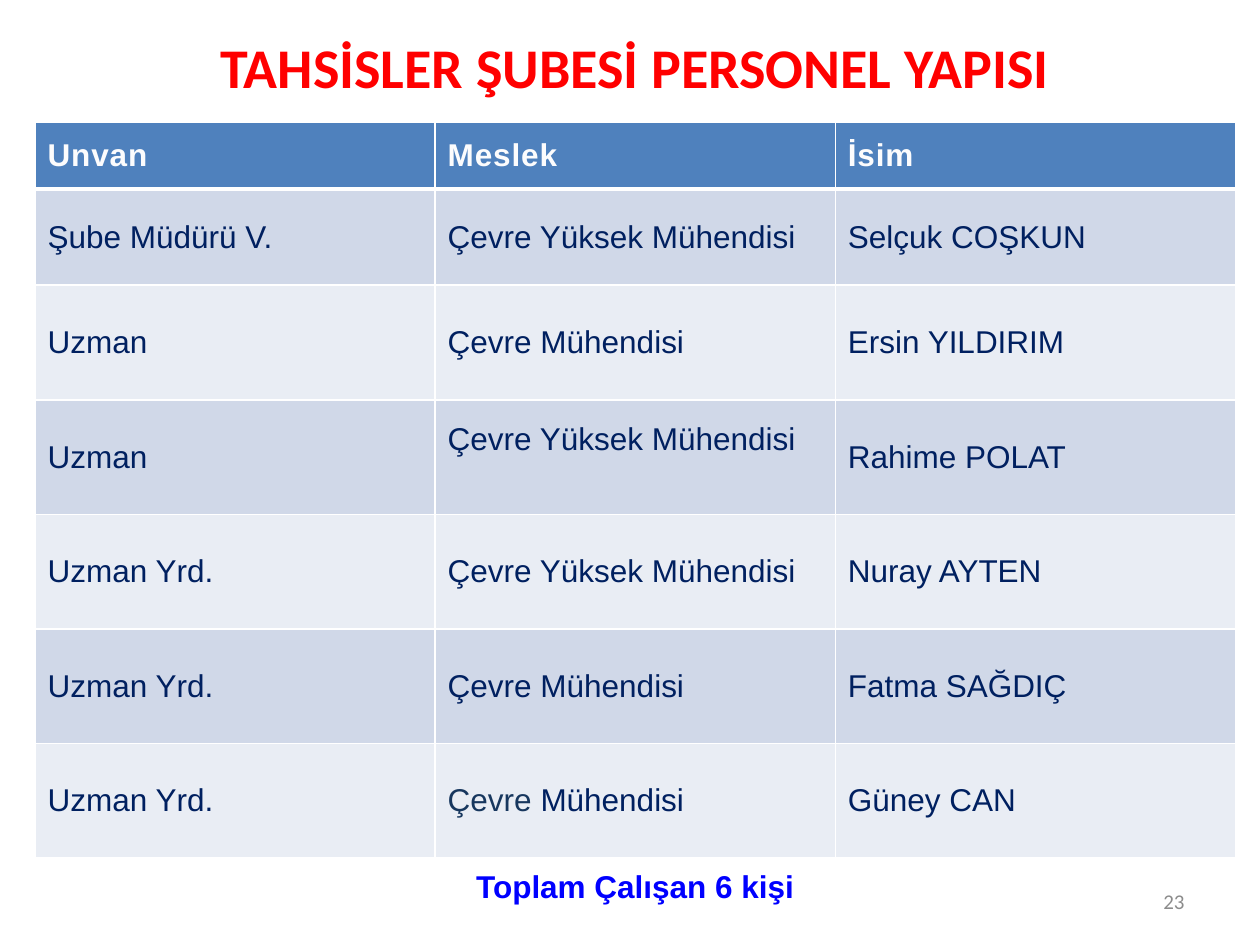
from typing import NamedTuple

from lxml import etree
from pptx import Presentation
from pptx import util as u
from pptx.dml.color import RGBColor
from pptx.enum import text
from pptx.oxml import ns

RED = RGBColor(0xFF, 0x00, 0x00)
BLUE = RGBColor(0x00, 0x00, 0xFF)
NAVY = RGBColor(0x00, 0x20, 0x60)
SLATE = RGBColor(0x17, 0x37, 0x5E)
GREY = RGBColor(0x8C, 0x8C, 0x8C)
WHITE = RGBColor(0xFF, 0xFF, 0xFF)
OFF_WHITE = RGBColor(0xFC, 0xFC, 0xFD)
HEADER_FILL = RGBColor(0x4F, 0x81, 0xBD)
BANDS = (RGBColor(0xE9, 0xED, 0xF4), RGBColor(0xD0, 0xD8, 0xE8))


class Person(NamedTuple):
    title: str
    job: str
    name: str


class Style(NamedTuple):
    size: float
    color: RGBColor
    bold: bool = False
    font: str = "Arial"
    align: text.PP_ALIGN = text.PP_ALIGN.LEFT


class Box(NamedTuple):
    left: float
    top: float
    width: float
    height: float

    def lengths(self) -> list[u.Length]:
        return [u.Pt(v) for v in self]


HEADER = Person("Unvan", "Meslek", "İsim")
STAFF = [
    Person("Şube Müdürü V.", "Çevre Yüksek Mühendisi", "Selçuk COŞKUN"),
    Person("Uzman", "Çevre Mühendisi", "Ersin YILDIRIM"),
    Person("Uzman", "Çevre Yüksek Mühendisi", "Rahime POLAT"),
    Person("Uzman Yrd.", "Çevre Yüksek Mühendisi", "Nuray AYTEN"),
    Person("Uzman Yrd.", "Çevre Mühendisi", "Fatma SAĞDIÇ"),
    Person("Uzman Yrd.", "Çevre Mühendisi", "Güney CAN"),
]
ROW_HEIGHTS = [38, 55] + [65.5] * 5
TABLE_BOX = Box(20, 70, 686, sum(ROW_HEIGHTS))


def write(tf, content: str, style: Style):
    """Put one styled paragraph into a text frame and return it."""
    p = tf.paragraphs[0]
    p.alignment = style.align
    p.add_run().text = content
    f = p.font
    f.name, f.size, f.bold = style.font, u.Pt(style.size), style.bold
    f.color.rgb = style.color
    return p


def add_label(slide, box: Box, content: str, style: Style, anchor) -> None:
    tf = slide.shapes.add_textbox(*box.lengths()).text_frame
    tf.word_wrap = True
    tf.vertical_anchor = anchor
    write(tf, content, style)


def set_borders(cell, bottom: float) -> None:
    """White 1 pt borders, with the given width below."""
    tc_pr = cell._tc.get_or_add_tcPr()
    widths = {"lnL": 1, "lnR": 1, "lnT": 1, "lnB": bottom}
    for i, (tag, width) in enumerate(widths.items()):
        ln = etree.Element(ns.qn(f"a:{tag}"), w=str(u.Pt(width)))
        fill = etree.SubElement(ln, ns.qn("a:solidFill"))
        etree.SubElement(fill, ns.qn("a:srgbClr"), val=str(WHITE))
        tc_pr.insert(i, ln)


def add_staff_table(slide):
    rows = [HEADER, *STAFF]
    table = slide.shapes.add_table(
        len(rows), len(HEADER), *TABLE_BOX.lengths()).table
    for col in table.columns:
        col.width = u.Pt(TABLE_BOX.width / len(HEADER))
    for i, (person, height) in enumerate(zip(rows, ROW_HEIGHTS)):
        is_header = i == 0
        table.rows[i].height = u.Pt(height)
        style = Style(18, OFF_WHITE, True) if is_header else Style(18, NAVY)
        for cell, content in zip(table.rows[i].cells, person):
            cell.vertical_anchor = text.MSO_ANCHOR.MIDDLE
            cell.fill.solid()
            cell.fill.fore_color.rgb = HEADER_FILL if is_header else BANDS[i % 2]
            # A body row lies under the thick header rule
            set_borders(cell, bottom=3 if is_header else 1)
            p = write(cell.text_frame, content, style)
            if is_header:
                p.runs[0]._r.get_or_add_rPr().set("spc", "50")
    return table


def main() -> None:
    prs = Presentation()
    prs.slide_width, prs.slide_height = u.Pt(720), u.Pt(540)
    slide = prs.slides.add_slide(prs.slide_layouts[5])
    center = text.PP_ALIGN.CENTER

    # Title
    title = slide.shapes.title
    title.left, title.top, title.width, title.height = Box(88, 15, 550, 85).lengths()
    title.text_frame.vertical_anchor = text.MSO_ANCHOR.TOP
    write(title.text_frame, "TAHSİSLER ŞUBESİ PERSONEL YAPISI",
          Style(32, RED, True, "Calibri", center))

    # Staff table
    table = add_staff_table(slide)

    # The third person's job sits above the middle of its row
    table.cell(3, 1).margin_bottom = u.Pt(24)

    # The last job has its first word in another colour
    p = table.cell(6, 1).text_frame.paragraphs[0]
    first, last = p.runs[0], p.add_run()
    first.text, last.text = "Çevre ", "Mühendisi"
    first.font.color.rgb, last.font.color.rgb = SLATE, NAVY

    # Slide number and total
    add_label(slide, Box(516, 500.5, 168, 28.5), "23",
              Style(12, GREY, False, "Calibri", text.PP_ALIGN.RIGHT),
              text.MSO_ANCHOR.MIDDLE)
    add_label(slide, Box(183, 492, 360, 29), "Toplam Çalışan 6 kişi",
              Style(18, BLUE, True, align=center), text.MSO_ANCHOR.TOP)

    prs.save("out.pptx")


if __name__ == "__main__":
    main()
